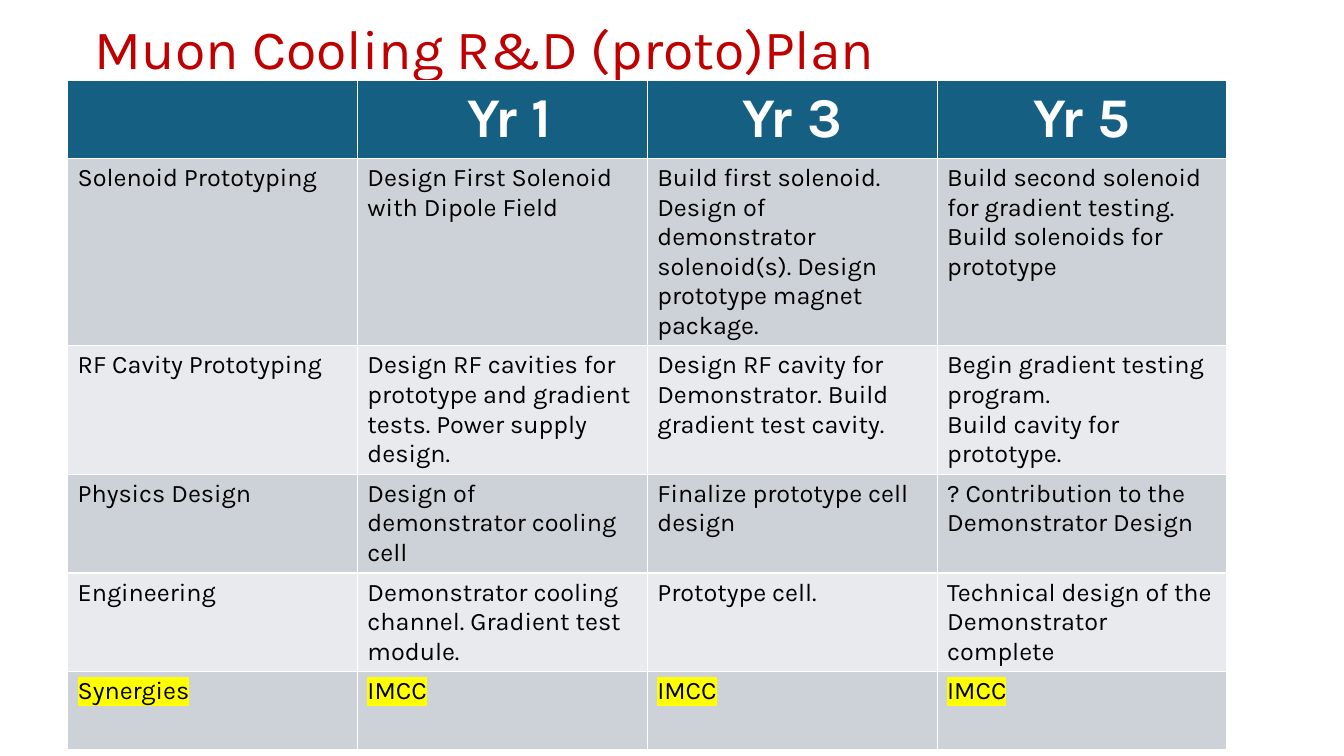
from lxml import etree
from pptx import Presentation
from pptx import util as u
from pptx.dml.color import RGBColor
from pptx.enum import text
from pptx.oxml import ns


def color(value):
    return RGBColor.from_string(value)


def format_runs(paragraph, size, value, bold=False):
    for run in paragraph.runs:
        run.font.size = u.Pt(size)
        run.font.bold = bold
        run.font.color.rgb = color(value)
        run.font.name = "Karla"


presentation = Presentation()
presentation.slide_width = u.Inches(13.33)
presentation.slide_height = u.Inches(7.5)
slide = presentation.slides.add_slide(presentation.slide_layouts[5])

title = slide.shapes.title
title.left, title.top = u.Inches(0.84), u.Inches(0.15)
title.width, title.height = u.Inches(11.5), u.Inches(0.73)
title.text_frame.text = "Muon Cooling R&D (proto)Plan"
title.text_frame.auto_size = text.MSO_AUTO_SIZE.NONE
title.text_frame.vertical_anchor = text.MSO_ANCHOR.MIDDLE
title_paragraph = title.text_frame.paragraphs[0]
title_paragraph.alignment = text.PP_ALIGN.LEFT
title_paragraph.line_spacing = 0.9
format_runs(title_paragraph, 39.6, "C00000")

plan = [
    ["", " Yr 1", "Yr 3", "Yr 5"],
    [
        "Solenoid Prototyping",
        "Design First Solenoid with Dipole Field",
        "Build first solenoid.\nDesign of demonstrator solenoid(s). Design prototype magnet package.",
        "Build second solenoid for gradient testing.\nBuild solenoids for prototype",
    ],
    [
        "RF Cavity Prototyping",
        "Design RF cavities for prototype and gradient tests. Power supply design.",
        "Design RF cavity for Demonstrator. Build gradient test cavity.",
        "Begin gradient testing program.\nBuild cavity for prototype.",
    ],
    [
        "Physics Design",
        "Design of demonstrator cooling cell",
        "Finalize prototype cell design",
        "? Contribution to the Demonstrator Design",
    ],
    [
        "Engineering",
        "Demonstrator cooling channel. Gradient test module.",
        "Prototype cell.",
        "Technical design of the Demonstrator complete",
    ],
    ["Synergies", "IMCC", "IMCC", "IMCC"],
]
row_heights = [0.77, 0.86, 0.77, 0.86, 0.86, 0.77]
band_fills = ["E8EAED", "CCD2D8"]

table = slide.shapes.add_table(
    len(plan), 4, u.Inches(0.67), u.Inches(0.8), u.Inches(11.5), u.Inches(sum(row_heights))
).table
for row, height in zip(table.rows, row_heights):
    row.height = u.Inches(height)

for row_index, entries in enumerate(plan):
    is_header = row_index == 0
    for column_index, entry in enumerate(entries):
        cell = table.cell(row_index, column_index)
        cell.fill.solid()
        cell.fill.fore_color.rgb = color("156082" if is_header else band_fills[row_index % 2])
        cell.text_frame.text = entry
        if is_header:
            cell.vertical_anchor = text.MSO_ANCHOR.MIDDLE
        for paragraph in cell.text_frame.paragraphs:
            if is_header:
                paragraph.alignment = text.PP_ALIGN.CENTER
                format_runs(paragraph, 40, "FFFFFF", bold=True)
            else:
                format_runs(paragraph, 18, "000000")

for cell in table.rows[len(plan) - 1].cells:
    run_properties = cell.text_frame.paragraphs[0].runs[0].font._element
    highlight = etree.Element(ns.qn("a:highlight"))
    etree.SubElement(highlight, ns.qn("a:srgbClr"), val="FFFF00")
    run_properties.find(ns.qn("a:solidFill")).addnext(highlight)

presentation.save("out.pptx")
